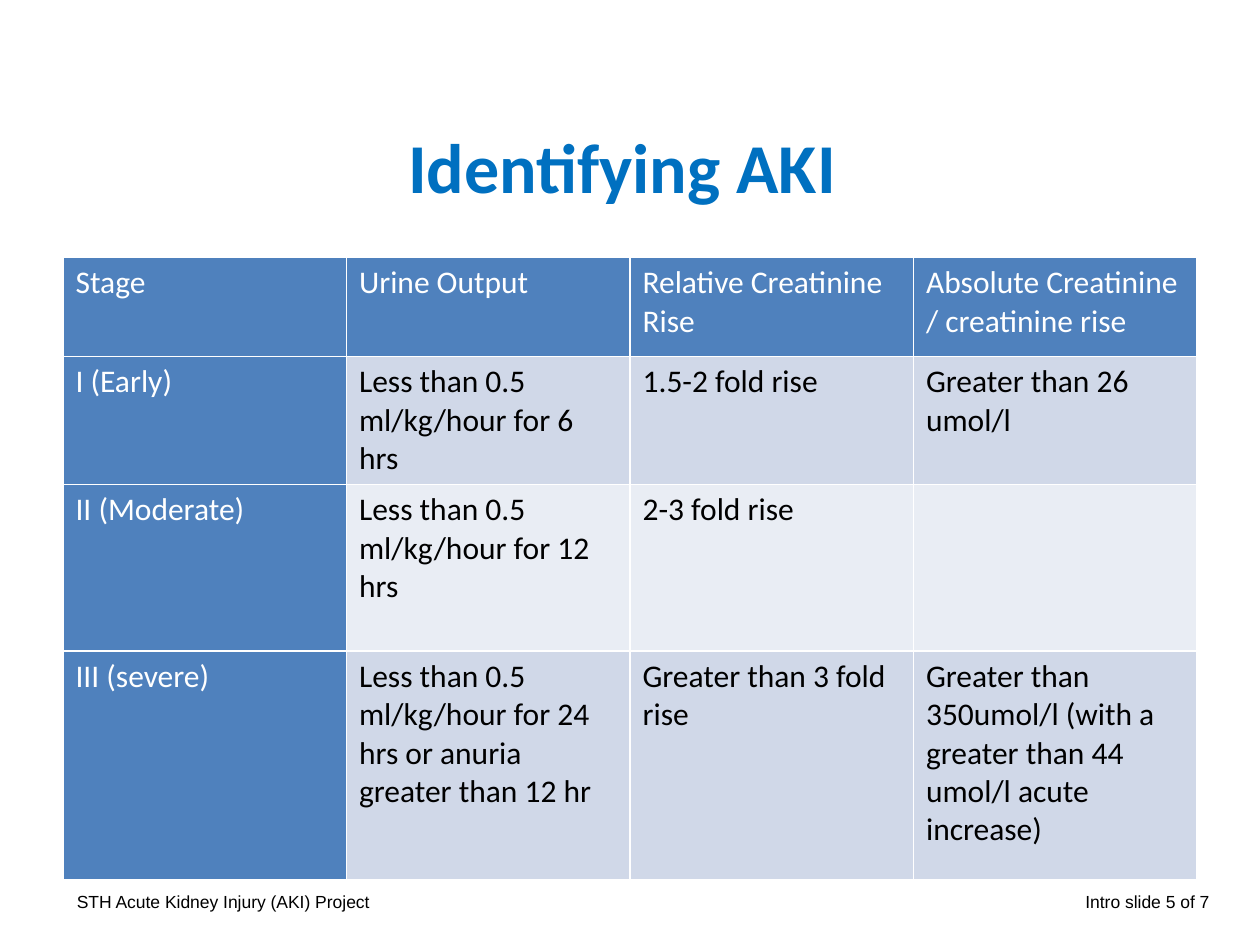
from lxml.etree import SubElement
from pptx import Presentation
from pptx.dml.color import RGBColor as RGB
from pptx.enum.text import MSO_ANCHOR as Anchor, PP_ALIGN as Align
from pptx.oxml import parse_xml
from pptx.oxml.ns import qn, nsdecls
from pptx.util import Cm, Pt


def add_run(para, text, font, size, color, bold=False):
    run = para.add_run()
    run.text = text
    run.font.name = font
    run.font.size = Pt(size)
    run.font.bold = bold
    run.font.color.rgb = RGB.from_string(color)


def edge_cell(cell, color, width):
    props = cell._tc.get_or_add_tcPr()
    for i, side in enumerate("LRTB"):
        props.insert(i, parse_xml(
            f'<a:ln{side} {nsdecls("a")} w="{Pt(width)}"><a:solidFill>'
            f'<a:srgbClr val="{color}"/></a:solidFill></a:ln{side}>'))


BLUE, WHITE, BLACK = "4F81BD", "FFFFFF", "000000"
BANDS = ["E9EDF4", "D0D8E8"]

deck = Presentation()
deck.slide_width, deck.slide_height = Cm(25.4), Cm(19.05)
slide = deck.slides.add_slide(deck.slide_layouts[6])

# Title
title = slide.shapes.add_textbox(Cm(1.27), Cm(1.75), Cm(22.86), Cm(3.18))
frame = title.text_frame
frame.word_wrap = True
frame.vertical_anchor = Anchor.MIDDLE
para = frame.paragraphs[0]
para.alignment = Align.CENTER
add_run(para, "Identifying AKI ", "Calibri", 40, "0070C0", True)

# Table of stages
rows = [
    ["Stage", "Urine Output", "Relative Creatinine  Rise",
     "Absolute Creatinine / creatinine rise"],
    ["I (Early)", "Less than 0.5 ml/kg/hour for 6 hrs", "1.5-2 fold rise",
     "Greater than 26 umol/l"],
    ["II (Moderate)", "Less than 0.5 ml/kg/hour for 12 hrs",
     "2-3 fold rise", ""],
    ["III (severe)",
     "Less than 0.5 ml/kg/hour for 24 hrs or anuria greater than 12 hr",
     "Greater than 3 fold rise",
     "Greater than 350umol/l (with a greater than 44 umol/l acute increase)"],
]
highs = [2, 2.58, 3.35, 4.62]
table = slide.shapes.add_table(
    len(rows), len(rows[0]), Cm(1.27), Cm(5.19), Cm(22.86), Cm(sum(highs))).table
table.first_col = True
for r, (row, high) in enumerate(zip(rows, highs)):
    table.rows[r].height = Cm(high)
    for c, text in enumerate(row):
        cell = table.cell(r, c)
        head = r == 0 or c == 0
        edge_cell(cell, WHITE, 1)
        cell.fill.solid()
        cell.fill.fore_color.rgb = RGB.from_string(BLUE if head else BANDS[r % 2])
        if text:
            add_run(cell.text_frame.paragraphs[0], text, "Calibri", 18,
                    WHITE if head else BLACK)

# Footer, with its right part set on a right tab
foot = slide.shapes.add_textbox(Cm(1.3), Cm(17.83), Cm(23.6), Cm(0.68))
foot.text_frame.word_wrap = True
para = foot.text_frame.paragraphs[0]
tabs = SubElement(para._p.get_or_add_pPr(), qn("a:tabLst"))
SubElement(tabs, qn("a:tab"), pos=str(Cm(22.83)), algn="r")
add_run(para, "STH Acute Kidney Injury (AKI) Project\tIntro slide 5 of 7",
        "Arial", 10, BLACK)

deck.save("out.pptx")
